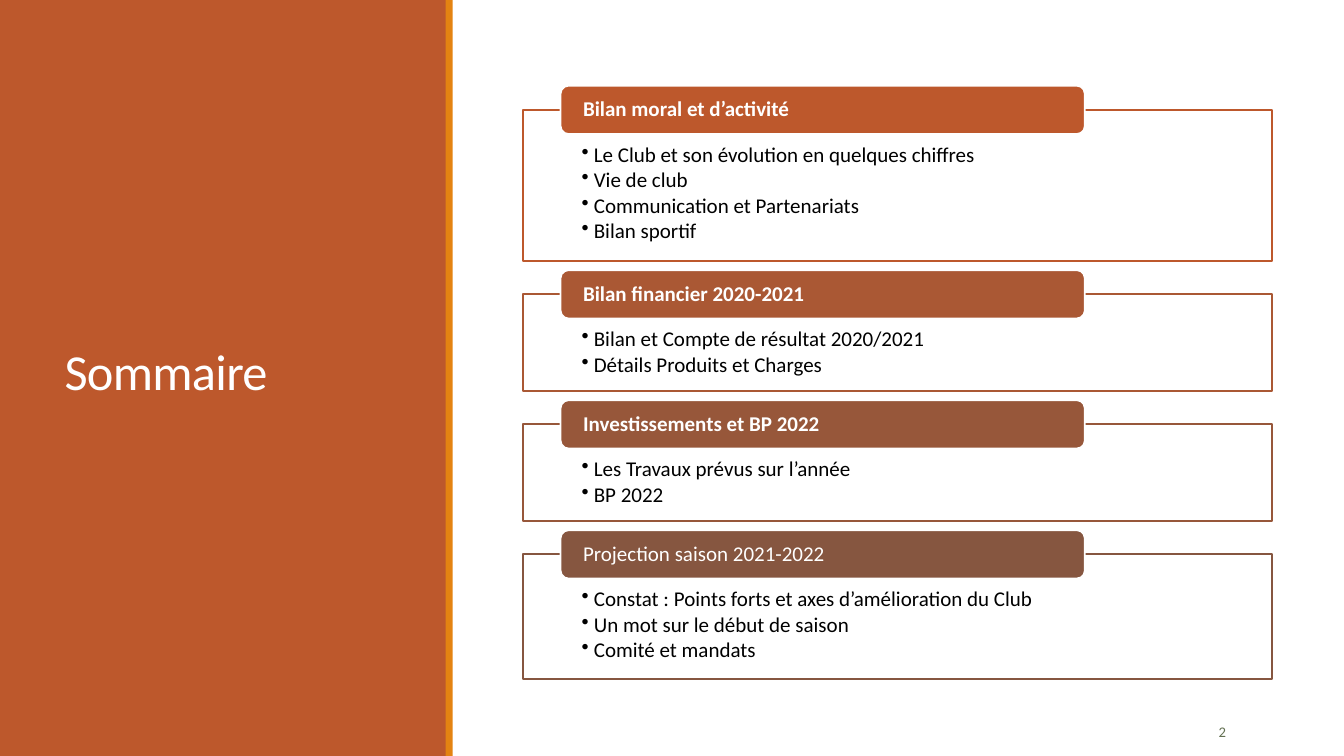
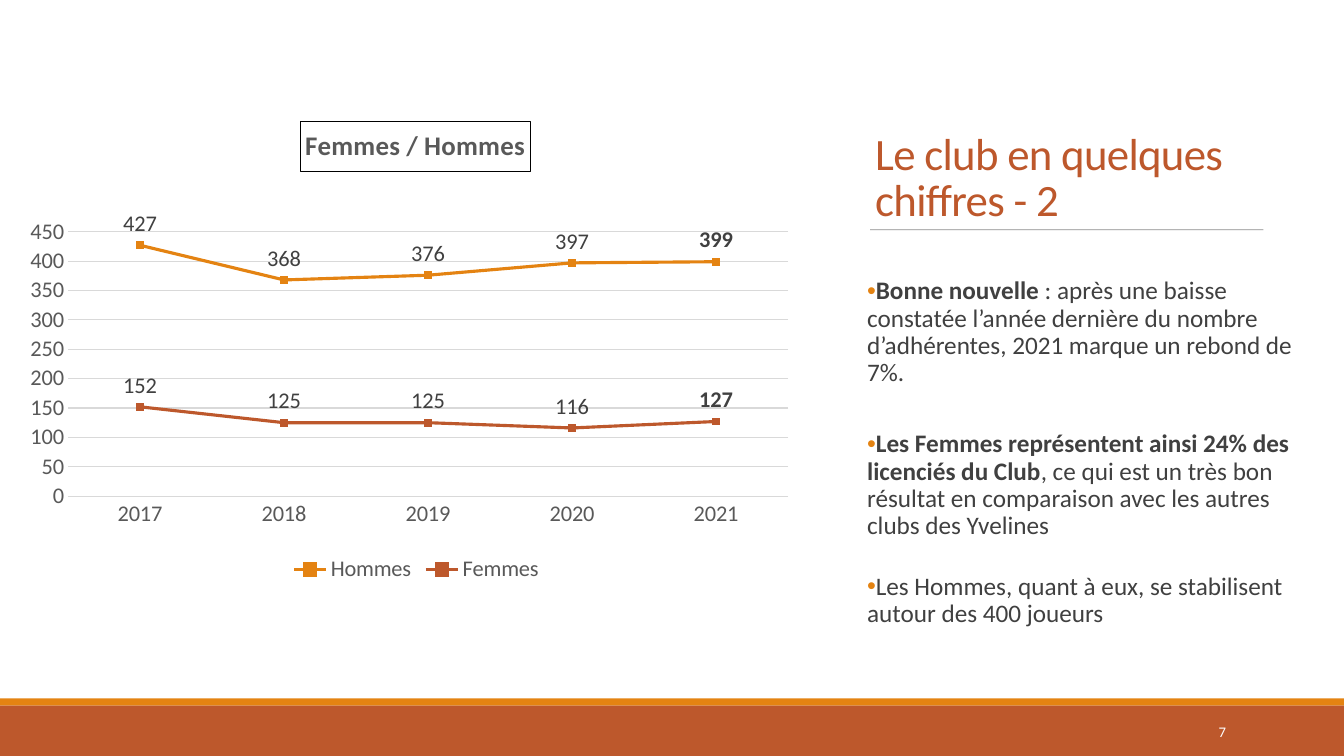
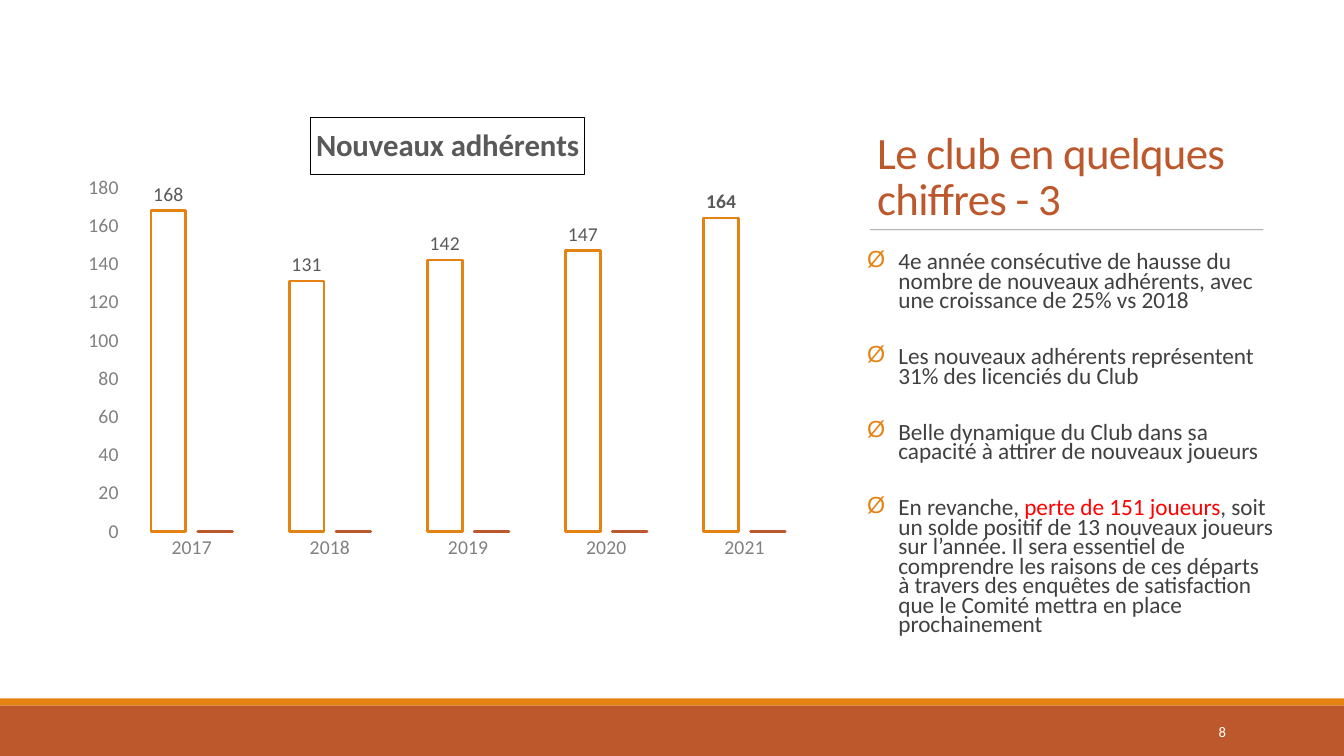
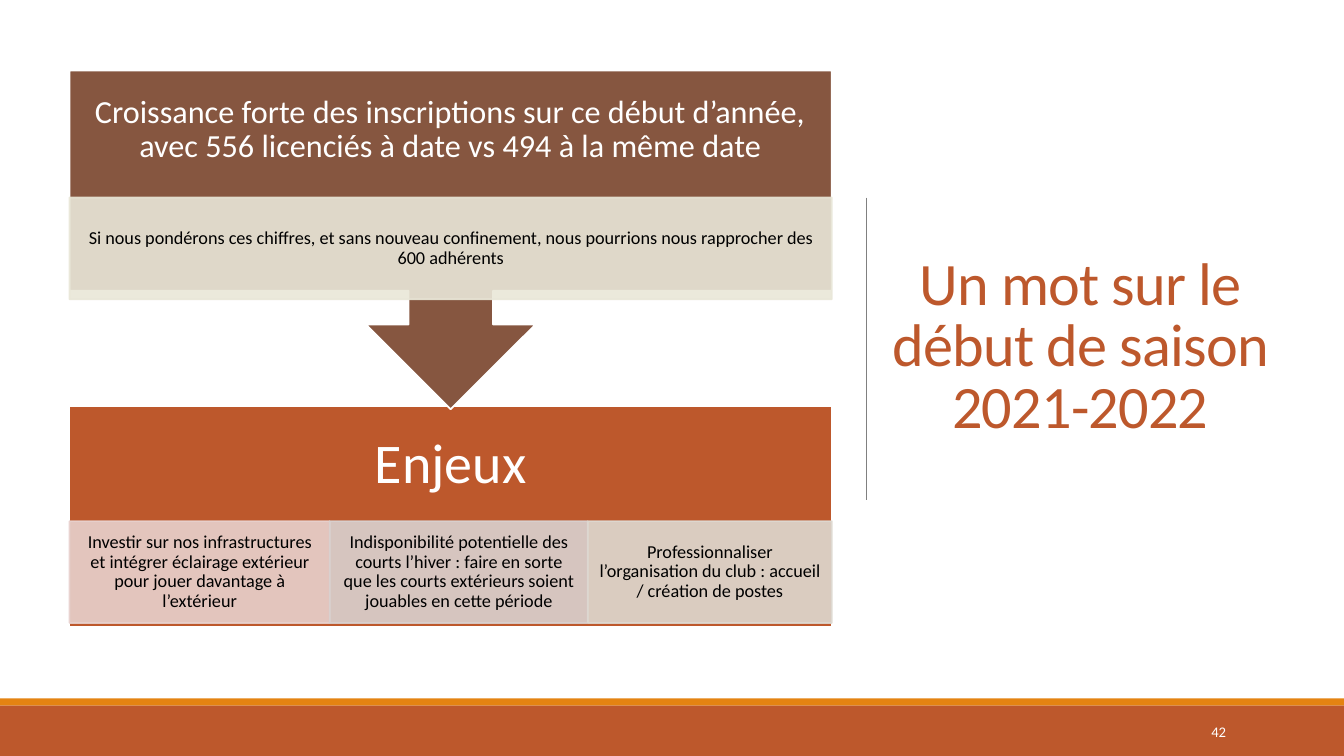
from dataclasses import dataclass

from lxml import etree
from pptx import Presentation
from pptx import util as u
from pptx.chart.data import CategoryChartData
from pptx.dml.color import RGBColor
from pptx.enum import chart as ch, shapes, text
from pptx.oxml.ns import qn


@dataclass(frozen=True)
class Theme:
    font: str = "Calibri"
    rust: str = "BD582C"
    amber: str = "E48312"
    brown: str = "865640"
    white: str = "FFFFFF"
    black: str = "000000"
    ink: str = "404040"
    chart_ink: str = "595959"
    grey: str = "808080"
    grid: str = "D9D9D9"
    alert: str = "FF0000"
    page_grey: str = "637052"
    page_size: float = 10.5
    card_size: float = 15
    small_size: float = 13
    outline: float = 1.25


T = Theme()
EMU_PER_PX = 9144
WIDTH, HEIGHT = 1333, 750
LEFT, CENTER, RIGHT = text.PP_ALIGN.LEFT, text.PP_ALIGN.CENTER, text.PP_ALIGN.RIGHT
TOP, MIDDLE, BOTTOM = text.MSO_ANCHOR.TOP, text.MSO_ANCHOR.MIDDLE, text.MSO_ANCHOR.BOTTOM
RECT = shapes.MSO_SHAPE.RECTANGLE
TITLE_AND_BODY, TITLE_ONLY = 1, 5

# ---- Content ----
# heading, bold heading, colour, height, items
AGENDA = [
    ("Bilan moral et d’activité", True, T.rust, 150,
     ["Le Club et son évolution en quelques chiffres", "Vie de club",
      "Communication et Partenariats", "Bilan sportif"]),
    ("Bilan financier 2020-2021", True, "AA5834", 96,
     ["Bilan et Compte de résultat 2020/2021", "Détails Produits et Charges"]),
    ("Investissements et BP 2022", True, "97573A", 96,
     ["Les Travaux prévus sur l’année", "BP 2022"]),
    ("Projection saison 2021-2022", False, T.brown, 124,
     ["Constat : Points forts et axes d’amélioration du Club",
      "Un mot sur le début de saison", "Comité et mandats"]),
]
YEARS = ["2017", "2018", "2019", "2020", "2021"]
MEMBERS = [("Hommes", [427, 368, 376, 397, 399], T.amber),
           ("Femmes", [152, 125, 125, 116, 127], T.rust)]
NEWCOMERS = [("Series 1", [168, 131, 142, 147, 164], T.amber),
             ("Series 2", [0, 0, 0, 0, 0], T.rust)]
BOLD = {"bold": True}
MEMBER_NOTES = [
    [("Bonne nouvelle ", BOLD),
     (": après une baisse constatée l’année dernière du nombre d’adhérentes, "
      "2021 marque un rebond de 7%.", {})],
    [("Les Femmes représentent ainsi 24% des licenciés du Club", BOLD),
     (", ce qui est un très bon résultat en comparaison avec les autres clubs "
      "des Yvelines", {})],
    "Les Hommes, quant à eux, se stabilisent autour des 400 joueurs",
]
NEWCOMER_NOTES = [
    "4e année consécutive de hausse du nombre de nouveaux adhérents, avec une "
    "croissance de 25% vs 2018",
    "Les nouveaux adhérents représentent 31% des licenciés du Club",
    "Belle dynamique du Club dans sa capacité à attirer de nouveaux joueurs",
    [("En revanche, ", {}), ("perte de 151 joueurs", {"color": T.alert}),
     (", soit un solde positif de 13 nouveaux joueurs sur l’année. Il sera essentiel "
      "de comprendre les raisons de ces départs à travers des enquêtes de satisfaction "
      "que le Comité mettra en place prochainement", {})],
]
GROWTH = ("Croissance forte des inscriptions sur ce début d’année, avec 556 licenciés "
          "à date vs 494 à la même date")
OUTLOOK = ("Si nous pondérons ces chiffres, et sans nouveau confinement, nous pourrions "
           "nous rapprocher des 600 adhérents")
# width, colour, text
STAKES = [
    (258, "E8D1CD", "Investir sur nos infrastructures et intégrer éclairage extérieur "
                    "pour jouer davantage à l’extérieur"),
    (256, "D9D1CF", "Indisponibilité potentielle des courts l’hiver : faire en sorte que "
                    "les courts extérieurs soient jouables en cette période"),
    (242, "DED9D1", "Professionnaliser l’organisation du club : accueil / création de postes"),
]


# ---- Helpers ----
def px(value):
    return u.Emu(round(value * EMU_PER_PX))


def box_of(at):
    return [px(value) for value in at]


def rgb(color):
    return RGBColor.from_string(color)


def style_font(font, size, color, bold=False):
    font.name, font.size, font.bold = T.font, u.Pt(size), bold
    font.color.rgb = rgb(color)


def add_bullet(para, char, color=None, margin=0, indent=0):
    props = para._p.get_or_add_pPr()
    props.set("marL", str(px(margin)))
    props.set("indent", str(px(indent)))
    if color:
        holder = etree.SubElement(props, qn("a:buClr"))
        etree.SubElement(holder, qn("a:srgbClr"), val=color)
    etree.SubElement(props, qn("a:buChar"), char=char)


def write(frame, paras, size, color, bold=False, anchor=MIDDLE, align=CENTER,
          inset=(10, 5, 10, 5), spacing=0.9, gaps=(), bullet=None, tracking=None):
    """Fill a text frame; gaps holds the space in points before paragraphs 2, 3..."""
    frame.word_wrap, frame.auto_size = True, text.MSO_AUTO_SIZE.NONE
    frame.vertical_anchor = anchor
    (frame.margin_left, frame.margin_top,
     frame.margin_right, frame.margin_bottom) = box_of(inset)
    for index, runs in enumerate(paras):
        para = frame.add_paragraph() if index else frame.paragraphs[0]
        if bullet:
            add_bullet(para, **bullet)
        para.alignment, para.line_spacing = align, spacing
        para.space_before = u.Pt(gaps[index - 1] if index else 0)
        para.space_after = u.Pt(0)
        for words, changes in [(runs, {})] if isinstance(runs, str) else runs:
            span = para.add_run()
            span.text = words
            style_font(span.font, size, **{"color": color, "bold": bold, **changes})
            if tracking:
                span._r.get_or_add_rPr().set("spc", str(tracking))


def set_alpha(fill_owner, percent):
    for color in fill_owner.iter(qn("a:srgbClr")):
        etree.SubElement(color, qn("a:alpha"), val=str(percent * 1000))


def add_block(slide, at, fill, line=None, kind=RECT, alpha=None):
    block = slide.shapes.add_shape(kind, *box_of(at))
    block.shadow.inherit = False
    block.fill.solid()
    block.fill.fore_color.rgb = rgb(fill)
    if line:
        block.line.color.rgb = rgb(line)
        block.line.width = u.Pt(T.outline)
    else:
        block.line.fill.background()
    if alpha:
        set_alpha(block._element.spPr, alpha)
    return block


def add_text(slide, at, words, size, color, **layout):
    box = slide.shapes.add_textbox(*box_of(at))
    write(box.text_frame, [words], size, color, **layout)


def add_rule(slide, x1, y1, x2, y2, alpha=None):
    rule = slide.shapes.add_connector(shapes.MSO_CONNECTOR.STRAIGHT, *box_of((x1, y1, x2, y2)))
    rule.line.color.rgb = rgb(T.grey)
    rule.line.width = u.Pt(0.5)
    if alpha:
        set_alpha(rule._element.spPr, alpha)
    etree.SubElement(rule._element.spPr, qn("a:effectLst"))


def place(shape, at):
    shape.left, shape.top, shape.width, shape.height = box_of(at)


def start_slide(deck, layout, title, at, size, page, color=T.rust, anchor=MIDDLE,
                align=LEFT, side_panel=False):
    """Add a slide with its bands, title and page number."""
    slide = deck.slides.add_slide(deck.slide_layouts[layout])
    if side_panel:
        bands = [((0, 0, 443, HEIGHT), T.rust), ((442, 0, 7, HEIGHT), T.amber)]
    else:
        bands = [((0, 693, WIDTH, 7), T.amber), ((0, 700, WIDTH, 50), T.rust)]
    for band_at, fill in bands:
        add_block(slide, band_at, fill)
    heading = slide.shapes.title
    slide.shapes._spTree.append(heading._element)  # keep the title above the panel
    place(heading, at)
    write(heading.text_frame, [title], size, color, anchor=anchor, align=align,
          spacing=0.85, tracking=-50)
    add_text(slide, (1083, 706, 143, 40), page, T.page_size,
             T.page_grey if side_panel else T.white, align=RIGHT, spacing=1)
    return slide


def set_layout(part, **fractions):
    """Give a chart title or plot area a fixed place."""
    layout = part.find(qn("c:layout"))
    if layout is None:
        layout = etree.Element(qn("c:layout"))
        part.insert(0, layout)
    manual = etree.SubElement(layout, qn("c:manualLayout"))
    if "w" in fractions:
        etree.SubElement(manual, qn("c:layoutTarget"), val="inner")
    for key in "xy":
        etree.SubElement(manual, qn(f"c:{key}Mode"), val="edge")
    for key, value in fractions.items():
        etree.SubElement(manual, qn(f"c:{key}"), val=str(value))


def add_year_chart(slide, kind, at, series, title, title_size, title_at, plot_at,
                   size, color, top, step):
    data = CategoryChartData()
    data.categories = YEARS
    for name, values, _ in series:
        data.add_series(name, values)
    chart = slide.shapes.add_chart(kind, *box_of(at), data).chart
    style_font(chart.font, size, T.black)
    chart.has_legend = False
    chart.has_title = True
    heading = chart.chart_title
    span = heading.text_frame.paragraphs[0].add_run()
    span.text = title
    style_font(span.font, title_size, T.chart_ink, True)
    heading.format.line.color.rgb = rgb(T.black)
    heading.format.line.width = u.Pt(0.75)
    set_layout(heading._element, **dict(zip("xy", title_at)))
    set_layout(chart._chartSpace.chart.plotArea, **dict(zip("xywh", plot_at)))
    for axis in (chart.category_axis, chart.value_axis):
        axis.major_tick_mark = axis.minor_tick_mark = ch.XL_TICK_MARK.NONE
        axis.has_major_gridlines = False
        axis.format.line.fill.background()
        style_font(axis.tick_labels.font, size, color)
    scale = chart.value_axis
    scale.minimum_scale, scale.maximum_scale, scale.major_unit = 0, top, step
    chart.plots[0].vary_by_categories = False
    return chart


def label_values(series, position, size, color):
    """Show every value, the last one in bold."""
    labels = series.data_labels
    labels.show_value, labels.position = True, position
    style_font(labels.font, size, color)
    last = series.points[len(YEARS) - 1].data_label
    style_font(last.font, size, color, True)
    last.position = position


def draw_line(line, color, width):
    line.color.rgb = rgb(color)
    line.width = u.Pt(width)


# ---- Slides ----
def build_agenda(deck):
    slide = start_slide(deck, TITLE_ONLY, "Sommaire", (54, 57, 337, 631), 36, "2",
                        color=T.white, side_panel=True)
    top, gap = 109, 33
    for heading, bold, color, height, items in AGENDA:
        card = add_block(slide, (519, top, 743, height), T.white, color)
        write(card.text_frame, items, T.card_size, T.black, anchor=TOP, align=LEFT,
              inset=(58, 34, 58, 12), gaps=[2] * len(items),
              bullet={"char": "•", "margin": 12, "indent": -12})
        tab = add_block(slide, (556, top - 24, 520, 48), color, T.white,
                        shapes.MSO_SHAPE.ROUNDED_RECTANGLE)
        write(tab.text_frame, [heading], T.card_size, T.white, bold=bold, align=LEFT,
              inset=(20, 0, 20, 0))
        top += height + gap


def start_figures(deck, number, title_at, page, body_at, notes, size, **layout):
    slide = start_slide(deck, TITLE_AND_BODY, f"Le club en quelques chiffres - {number}",
                        title_at, 32, page, anchor=BOTTOM)
    add_rule(slide, 863, 228, 1253, 228, alpha=90)
    body = slide.placeholders[1]
    place(body, body_at)
    write(body.text_frame, notes, size, T.ink, anchor=TOP, align=LEFT,
          inset=(0, 5, 0, 5), **layout)
    return slide


def build_members(deck):
    slide = start_figures(deck, 2, (858, 70, 404, 159), "7", (860, 271, 431, 401),
                          MEMBER_NOTES, 18, gaps=(31.5, 24),
                          bullet={"char": "•", "color": T.amber, "indent": -25})
    chart = add_year_chart(slide, ch.XL_CHART_TYPE.LINE_MARKERS, (29, 106, 768, 477), MEMBERS,
                           "Femmes / Hommes", 19.2, (0.35, 0.03), (0.05, 0.26, 0.93, 0.55),
                           16, T.chart_ink, 450, 50)
    chart.value_axis.has_major_gridlines = True
    for line in (chart.value_axis.major_gridlines.format.line, chart.category_axis.format.line):
        draw_line(line, T.grid, 0.75)
    chart.has_legend = True
    chart.legend.position = ch.XL_LEGEND_POSITION.BOTTOM
    chart.legend.include_in_layout = False
    style_font(chart.legend.font, 16, T.chart_ink)
    for series, (_, _, color) in zip(chart.plots[0].series, MEMBERS):
        series.smooth = False
        draw_line(series.format.line, color, 2.25)
        marker = series.marker
        marker.style, marker.size = ch.XL_MARKER_STYLE.SQUARE, 5
        marker.format.fill.solid()
        marker.format.fill.fore_color.rgb = rgb(color)
        marker.format.line.color.rgb = rgb(color)
        label_values(series, ch.XL_LABEL_POSITION.ABOVE, 16, T.ink)


def build_newcomers(deck):
    slide = start_figures(deck, 3, (860, 69, 404, 159), "8", (860, 247, 404, 442),
                          NEWCOMER_NOTES, 16.6, spacing=0.7, gaps=(26, 26, 26),
                          bullet={"char": "Ø", "color": T.amber, "margin": 31, "indent": -31})
    chart = add_year_chart(slide, ch.XL_CHART_TYPE.COLUMN_CLUSTERED, (77, 103, 745, 461),
                           NEWCOMERS, "Nouveaux adhérents", 22, (0.31, 0.03),
                           (0.06, 0.18, 0.92, 0.74), 14, T.grey, 180, 20)
    plot = chart.plots[0]
    plot.gap_width, plot.overlap = 164, -35
    for series, (_, _, color) in zip(plot.series, NEWCOMERS):
        series.invert_if_negative = False
        series.format.fill.background()
        draw_line(series.format.line, color, 2)
    label_values(plot.series[0], ch.XL_LABEL_POSITION.OUTSIDE_END, 14, T.chart_ink)


def add_tile(slide, at, color, words):
    tile = add_block(slide, at, color, color, alpha=90)
    write(tile.text_frame, [words], T.small_size, T.black, inset=(10, 2, 10, 2))


def build_season(deck):
    slide = start_slide(deck, TITLE_ONLY, "Un mot sur le début de saison 2021-2022",
                        (874, 69, 395, 553), 43, "42", align=CENTER)
    add_rule(slide, 859, 196, 859, 496)
    left, width = 69, 756
    # Stakes and their three tiles
    stakes = add_block(slide, (left, 403, width, 219), T.rust, T.white)
    write(stakes.text_frame, ["Enjeux"], 40, T.white, inset=(31, 31, 31, 132))
    x = left
    for tile_width, color, words in STAKES:
        add_tile(slide, (x, 517, tile_width, 101), color, words)
        x += tile_width
    # Growth callout pointing down to the stakes
    callout = add_block(slide, (left, 70, width, 336), T.brown, T.white,
                        shapes.MSO_SHAPE.UP_ARROW_CALLOUT)
    callout.rotation = 180
    add_text(slide, (left, 70, width, 118), GROWTH, 23, T.white, inset=(18, 18, 18, 18))
    add_tile(slide, (left, 196, width, 101), "E9E7D8", OUTLOOK)


def main():
    deck = Presentation()
    deck.slide_width, deck.slide_height = px(WIDTH), px(HEIGHT)
    for build in (build_agenda, build_members, build_newcomers, build_season):
        build(deck)
    deck.save("out.pptx")


if __name__ == "__main__":
    main()
